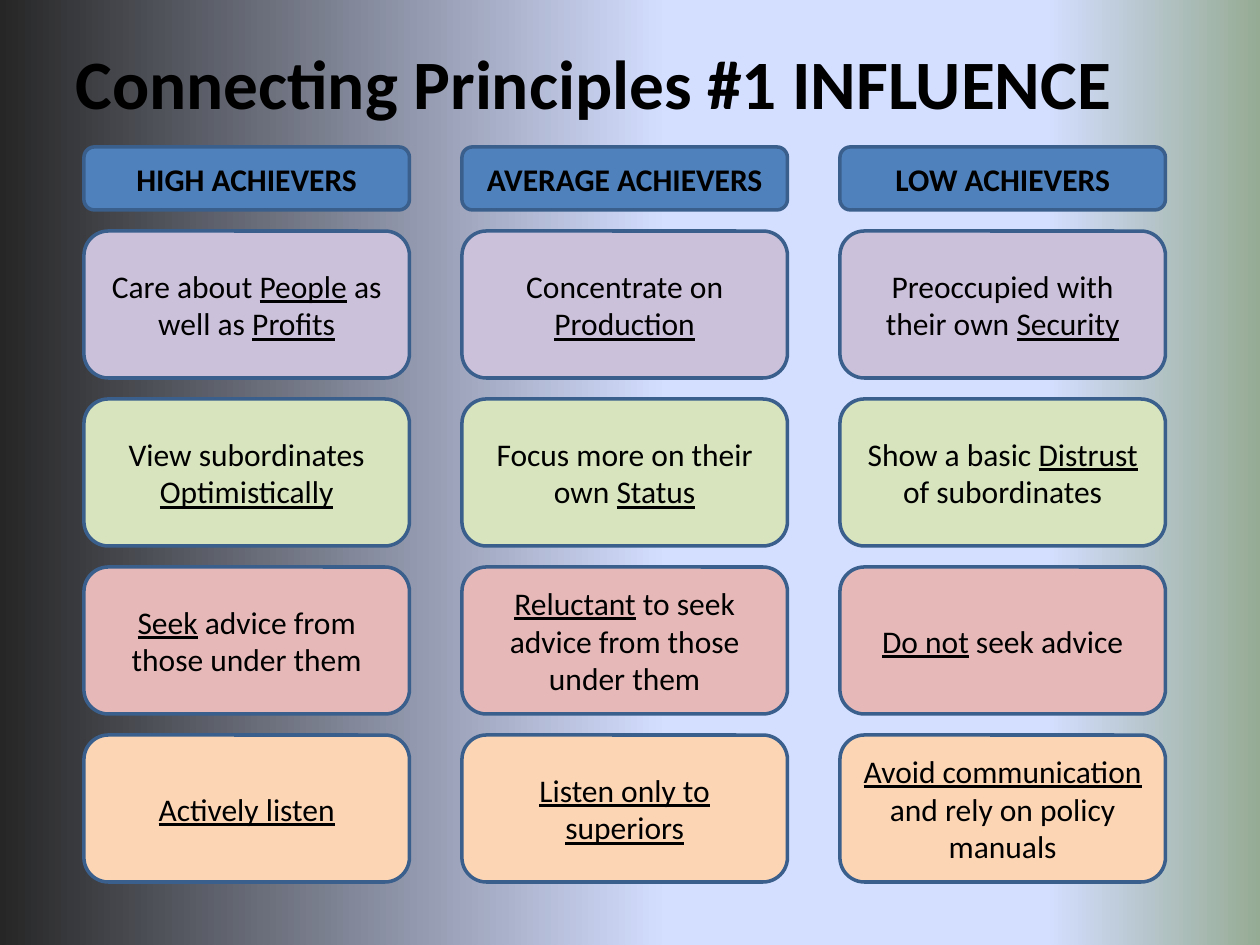
import dataclasses

import lxml.etree
import pptx
import pptx.dml.color
import pptx.enum.shapes
import pptx.enum.text
import pptx.oxml.ns
import pptx.util

EMU_PER_PX = 7620


@dataclasses.dataclass(frozen=True)
class Theme:
    """Colours, font and type sizes of the slide."""
    font: str = "Calibri"
    text: str = "000000"
    outline: str = "3A5F8C"
    header: str = "4F81BD"
    rows: tuple = ("CCC1DA", "D7E4BD", "E6B9B8", "FCD5B5")
    background: tuple = ((0, "262626"), (53, "D4DEFF"), (83, "D4DEFF"), (100, "96AB94"))
    title_size: float = 39.6
    body_size: float = 18
    line_width: float = 2


THEME = Theme()

TITLE = "Connecting Principles #1 INFLUENCE"

# Underscores enclose the underlined words.
COLUMNS = (
    ("HIGH ACHIEVERS", (
        "Care about _People_ as well as _Profits_",
        "View subordinates _Optimistically_",
        "_Seek_ advice from those under them",
        "_Actively listen_",
    )),
    ("AVERAGE ACHIEVERS", (
        "Concentrate on _Production_",
        "Focus more on their own _Status_",
        "_Reluctant_ to seek advice from those under them",
        "_Listen only to superiors_",
    )),
    ("LOW ACHIEVERS", (
        "Preoccupied with their own _Security_",
        "Show a basic _Distrust_ of subordinates",
        "_Do not_ seek advice",
        "_Avoid communication _and rely on policy manuals",
    )),
)


def px(length):
    """Turn px into EMU."""
    return pptx.util.Emu(length * EMU_PER_PX)


def rgb(value):
    """Turn a hex string into a colour."""
    return pptx.dml.color.RGBColor.from_string(value)


def write_text(shape, text, size, bold, alignment):
    """Write text run by run, underlining what underscores enclose."""
    frame = shape.text_frame
    frame.word_wrap = True
    frame.vertical_anchor = pptx.enum.text.MSO_ANCHOR.MIDDLE
    paragraph = frame.paragraphs[0]
    paragraph.alignment = alignment
    for index, part in enumerate(text.split("_")):
        if part:
            run = paragraph.add_run()
            run.text = part
            run.font.name = THEME.font
            run.font.size = pptx.util.Pt(size)
            run.font.bold = bold
            run.font.underline = index % 2 == 1
            run.font.color.rgb = rgb(THEME.text)


def paint_background(slide):
    """Fill the background with a left-to-right gradient."""
    fill = slide.background.fill
    fill.gradient()
    fill.gradient_angle = 0
    qualified = pptx.oxml.ns.qn
    stops = slide.element.find(".//" + qualified("a:gsLst"))
    for stop in list(stops):
        stops.remove(stop)
    for percent, colour in THEME.background:
        stop = lxml.etree.SubElement(stops, qualified("a:gs"), pos=str(percent * 1000))
        lxml.etree.SubElement(stop, qualified("a:srgbClr"), val=colour)


def add_title(slide, left, top, width, height):
    """Place the slide title in the given box."""
    shape = slide.shapes.add_textbox(px(left), px(top), px(width), px(height))
    write_text(shape, TITLE, THEME.title_size, True, pptx.enum.text.PP_ALIGN.LEFT)


def add_card(slide, left, top, width, height, text, colour, bold=False):
    """Place one rounded card with centred text."""
    shape = slide.shapes.add_shape(
        pptx.enum.shapes.MSO_SHAPE.ROUNDED_RECTANGLE,
        px(left), px(top), px(width), px(height))
    shape.shadow.inherit = False
    shape.fill.solid()
    shape.fill.fore_color.rgb = rgb(colour)
    shape.line.color.rgb = rgb(THEME.outline)
    shape.line.width = pptx.util.Pt(THEME.line_width)
    write_text(shape, text, THEME.body_size, bold, pptx.enum.text.PP_ALIGN.CENTER)


def add_column(slide, left, top, width, height, heading, cards):
    """Stack a heading and equal cards in the given box."""
    heading_height, gap = 60, 20
    add_card(slide, left, top, width, heading_height, heading, THEME.header, bold=True)
    pitch = (height - heading_height) // len(cards)
    for row, (text, colour) in enumerate(zip(cards, THEME.rows)):
        card_top = top + heading_height + gap + row * pitch
        add_card(slide, left, card_top, width, pitch - gap, text, colour)


def add_comparison(slide, left, top, width, height):
    """Set the columns side by side in the given box."""
    gap = 50
    pitch = (width + gap) // len(COLUMNS)
    for index, (heading, cards) in enumerate(COLUMNS):
        add_column(slide, left + index * pitch, top, pitch - gap, height, heading, cards)


def main():
    """Build and save the presentation."""
    presentation = pptx.Presentation()
    presentation.slide_width = px(1200)
    presentation.slide_height = px(900)
    slide = presentation.slides.add_slide(presentation.slide_layouts[6])
    paint_background(slide)
    add_title(slide, 60, 36, 1080, 84)
    add_comparison(slide, 80, 140, 1030, 700)
    presentation.save("out.pptx")


if __name__ == "__main__":
    main()
